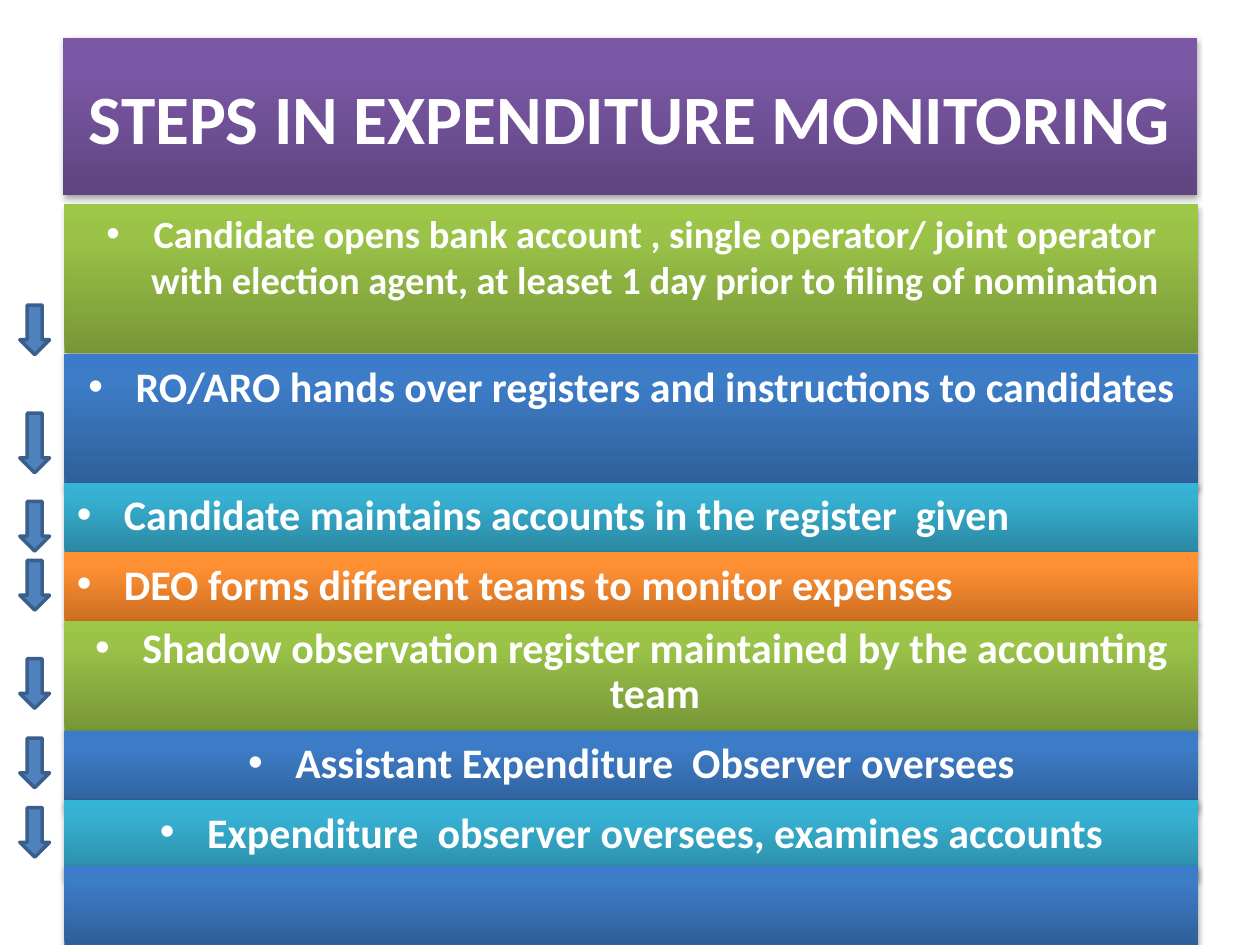
import copy

import pptx
import pptx.dml.color
import pptx.enum.shapes
import pptx.enum.text
import pptx.oxml.ns
import pptx.util
from lxml import etree

Cm = pptx.util.Cm
Pt = pptx.util.Pt
qn = pptx.oxml.ns.qn
SHAPES = pptx.enum.shapes.MSO_SHAPE
ALIGN = pptx.enum.text.PP_ALIGN
ANCHOR = pptx.enum.text.MSO_ANCHOR

PURPLE = ("5F4480", "7B58A6", "7C57A8")
GREEN = ("779737", "9BC348", "9DC746")
BLUE = ("2F5F99", "3D7CC7", "3A7CCB")
TEAL = ("2A88A2", "37B1D2", "34B4D6")
ORANGE = ("CC6E20", "FF9034", "FF9136")

STEPS = [
    (4.11, 3, GREEN, 22, ALIGN.CENTER, 1,
     "Candidate opens bank account , single operator/ joint operator "
     "with election agent, at leaset 1 day prior to filing of nomination"),
    (7.14, 2.69, BLUE, 24, ALIGN.CENTER, 1,
     "RO/ARO hands over registers and instructions to candidates"),
    (9.73, 1.4, TEAL, 24, ALIGN.LEFT, 1,
     "Candidate maintains accounts in the register  given"),
    (11.13, 1.4, ORANGE, 24, ALIGN.LEFT, 1,
     "DEO forms different teams to monitor expenses"),
    (12.52, 2.21, GREEN, 24, ALIGN.CENTER, 0.9,
     "Shadow observation register maintained by the accounting team"),
    (14.73, 1.6, BLUE, 24, ALIGN.CENTER, 1,
     "Assistant Expenditure  Observer oversees"),
    (16.13, 1.6, TEAL, 24, ALIGN.CENTER, 1,
     "Expenditure  observer oversees, examines accounts"),
    (17.45, 1.6, BLUE, 24, ALIGN.CENTER, 1, ""),
]
ARROWS = [(6.15, 1), (8.33, 1.2), (10.11, 1), (11.3, 1),
          (13.28, 1), (14.88, 1), (16.28, 1)]


def color(value):
    return pptx.dml.color.RGBColor.from_string(value)


def place(box, left, top, width, height):
    box.left, box.top = Cm(left), Cm(top)
    box.width, box.height = Cm(width), Cm(height)


def add_gradient(box, colors):
    box.fill.gradient()
    box.fill.gradient_angle = 90
    stop_list = box.element.spPr.find(".//" + qn("a:gsLst"))
    stop_list.append(copy.deepcopy(stop_list[0]))
    for stop, position, value in zip(box.fill.gradient_stops, (0, 0.8, 1), colors):
        stop.position = position
        stop.color.rgb = color(value)


def add_shadow(box):
    box.shadow.inherit = False
    effects = box.element.spPr.find(qn("a:effectLst"))
    shadow = etree.SubElement(effects, qn("a:outerShdw"), blurRad=str(Pt(3.1)),
                              dist=str(Pt(1.8)), dir="5400000", rotWithShape="0")
    black = etree.SubElement(shadow, qn("a:srgbClr"), val="000000")
    etree.SubElement(black, qn("a:alpha"), val="35000")


def style_panel(box, colors):
    add_gradient(box, colors)
    box.line.fill.background()
    add_shadow(box)


def add_text(para, text, size, align):
    para.alignment = align
    span = para.add_run()
    span.text = text
    span.font.name = "Calibri"
    span.font.size = Pt(size)
    span.font.bold = True
    span.font.color.rgb = color("FFFFFF")


def add_bullet(para):
    props = para._p.get_or_add_pPr()
    props.set("marL", str(Cm(0.95)))
    props.set("indent", str(Cm(-0.95)))
    etree.SubElement(props, qn("a:buFont"), typeface="Arial")
    etree.SubElement(props, qn("a:buChar"), char="•")


def set_title(page):
    title = page.shapes.title
    place(title, 1.27, 0.76, 22.86, 3.18)
    style_panel(title, PURPLE)
    title.text_frame.word_wrap = True
    title.text_frame.vertical_anchor = ANCHOR.MIDDLE
    add_text(title.text_frame.paragraphs[0],
             "STEPS IN EXPENDITURE MONITORING", 39.6, ALIGN.CENTER)


def add_step(page, top, height, colors, size, align, spacing, text):
    box = page.shapes.add_shape(SHAPES.RECTANGLE, Cm(1.3), Cm(top), Cm(22.86), Cm(height))
    style_panel(box, colors)
    if not text:
        return
    box.text_frame.word_wrap = True
    box.text_frame.vertical_anchor = ANCHOR.TOP
    para = box.text_frame.paragraphs[0]
    para.line_spacing = spacing
    para.space_before = Pt(size * 0.2)
    add_bullet(para)
    add_text(para, text, size, align)


def add_arrow(page, top, height):
    arrow = page.shapes.add_shape(SHAPES.DOWN_ARROW, Cm(0.4), Cm(top), Cm(0.6), Cm(height))
    arrow.shadow.inherit = False
    arrow.fill.solid()
    arrow.fill.fore_color.rgb = color("4F81BD")
    arrow.line.color.rgb = color("3A5F8C")
    arrow.line.width = Pt(2)


def main():
    deck = pptx.Presentation()
    deck.slide_width, deck.slide_height = Cm(25.4), Cm(19.05)
    page = deck.slides.add_slide(deck.slide_layouts[5])
    set_title(page)
    for step in STEPS:
        add_step(page, *step)
    for top, height in ARROWS:
        add_arrow(page, top, height)
    deck.save("out.pptx")


if __name__ == "__main__":
    main()
